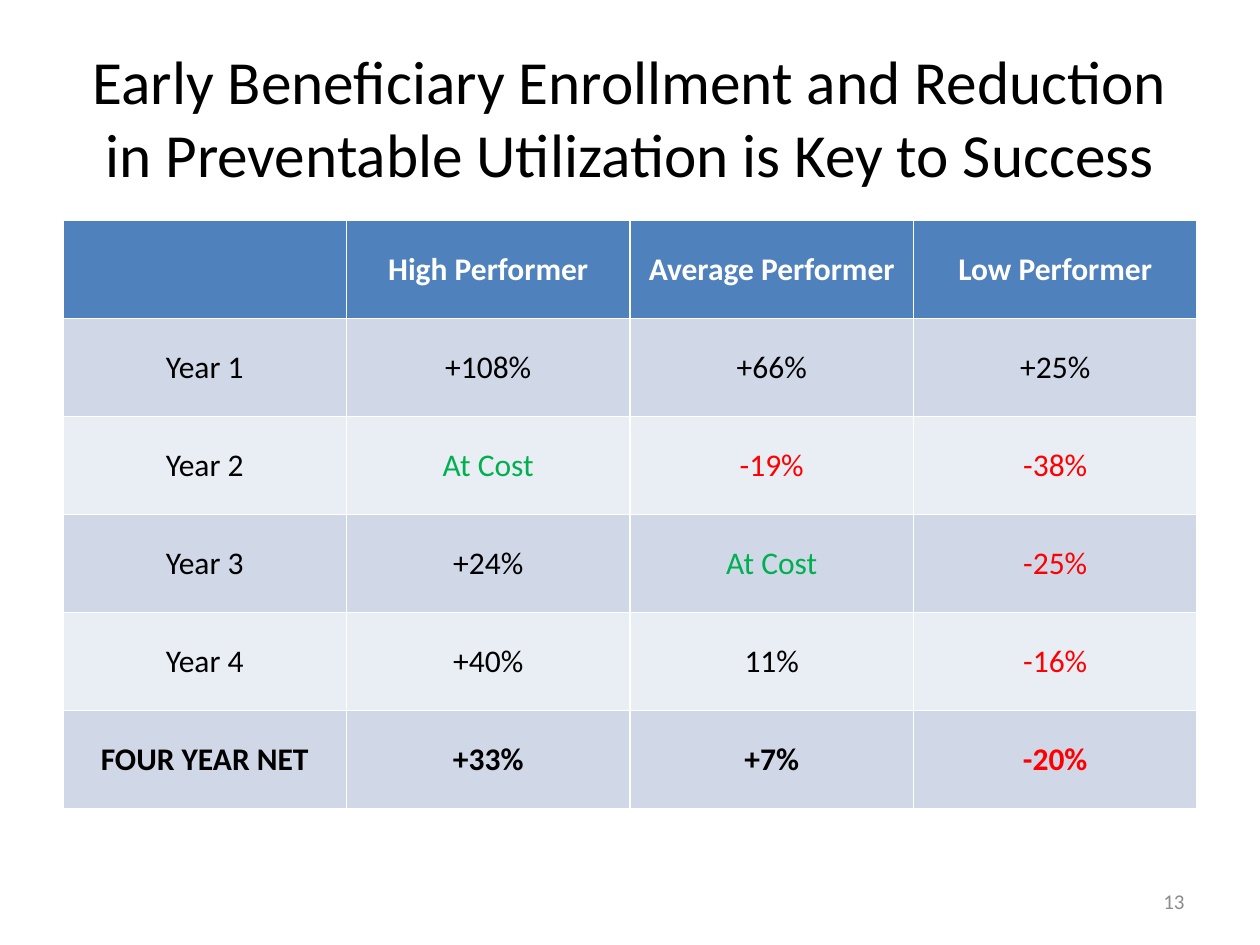
import pptx
import pptx.util
import pptx.dml.color
import pptx.enum.text
from pptx.util import Inches

COLORS = {
    "black": "000000",
    "white": "FFFFFF",
    "header": "4F81BD",
    "dark band": "D0D8E8",
    "light band": "E9EDF4",
    "at cost": "00B050",
    "loss": "FF0000",
    "page number": "8C8C8C",
}
ALIGN = pptx.enum.text.PP_ALIGN
MIDDLE = pptx.enum.text.MSO_ANCHOR.MIDDLE

PERFORMANCE = [
    ["", "High Performer", "Average Performer", "Low Performer"],
    ["Year 1", "+108%", "+66%", "+25%"],
    ["Year 2", "At Cost", "-19%", "-38%"],
    ["Year 3", "+24%", "At Cost", "-25%"],
    ["Year 4", "+40%", "11%", "-16%"],
    ["FOUR YEAR NET", "+33%", "+7%", "-20%"],
]


def rgb(name):
    return pptx.dml.color.RGBColor.from_string(COLORS[name])


def value_color(text):
    if text == "At Cost":
        return "at cost"
    return "loss" if text.startswith("-") else "black"


class SlideBuilder:
    font_name = "Calibri"

    def __init__(self, deck):
        self.page = deck.slides.add_slide(deck.slide_layouts[5])

    def set_text(self, frame, text, size, color, align=ALIGN.CENTER, bold=False):
        frame.text = text
        para = frame.paragraphs[0]
        para.alignment = align
        font = para.font
        font.name = self.font_name
        font.size = pptx.util.Pt(size)
        font.bold = bold
        font.color.rgb = rgb(color)

    def title(self, text, left, top, width, height):
        box = self.page.shapes.title
        box.left, box.top, box.width, box.height = map(
            Inches, (left, top, width, height))
        frame = box.text_frame
        frame.auto_size = pptx.enum.text.MSO_AUTO_SIZE.NONE
        frame.vertical_anchor = MIDDLE
        self.set_text(frame, text, 35, "black")

    def table(self, rows, left, top, width, height):
        """Add a banded table whose first row is a header and last row a total."""
        table = self.page.shapes.add_table(
            len(rows), len(rows[0]),
            Inches(left), Inches(top), Inches(width), Inches(height)).table
        last = len(rows) - 1
        for r, values in enumerate(rows):
            band = "dark band" if r % 2 else "light band"
            for c, text in enumerate(values):
                cell = table.cell(r, c)
                cell.vertical_anchor = MIDDLE
                cell.fill.solid()
                cell.fill.fore_color.rgb = rgb(band if r else "header")
                color = value_color(text) if r else "white"
                self.set_text(cell.text_frame, text, 18, color,
                              bold=r in (0, last))

    def page_number(self, number, left, top, width, height):
        box = self.page.shapes.add_textbox(
            Inches(left), Inches(top), Inches(width), Inches(height))
        frame = box.text_frame
        frame.word_wrap = True
        frame.vertical_anchor = MIDDLE
        self.set_text(frame, str(number), 12, "page number", ALIGN.RIGHT)


def main():
    deck = pptx.Presentation()
    deck.slide_width, deck.slide_height = Inches(10), Inches(7.5)
    slide = SlideBuilder(deck)
    slide.title("Early Beneficiary Enrollment and Reduction in Preventable "
                "Utilization is Key to Success", 0.5, 0.3, 9, 1.25)
    slide.table(PERFORMANCE, 0.5, 1.75, 9, 4.67)
    slide.page_number(13, 7.17, 6.95, 2.33, 0.4)
    deck.save("out.pptx")


if __name__ == "__main__":
    main()
